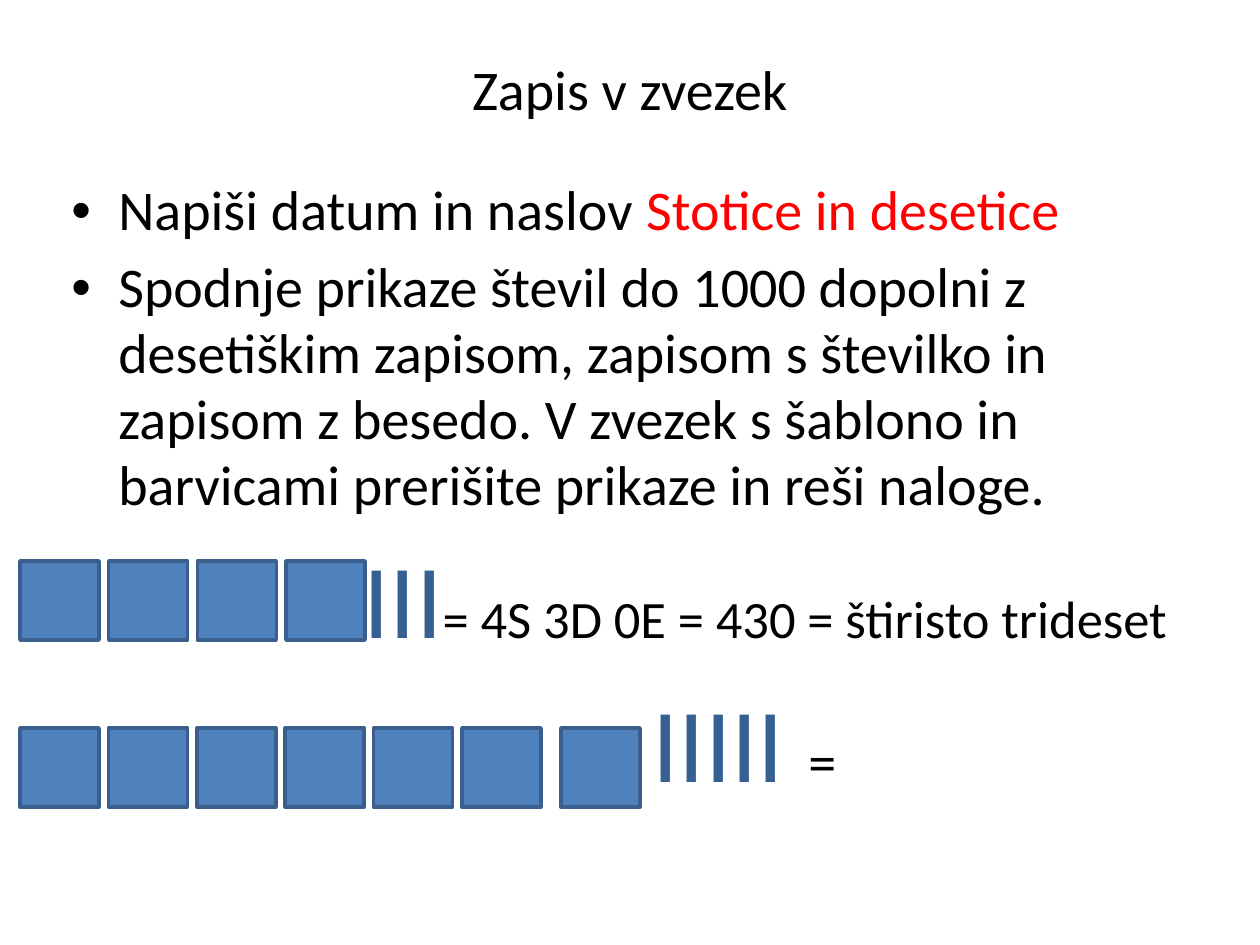
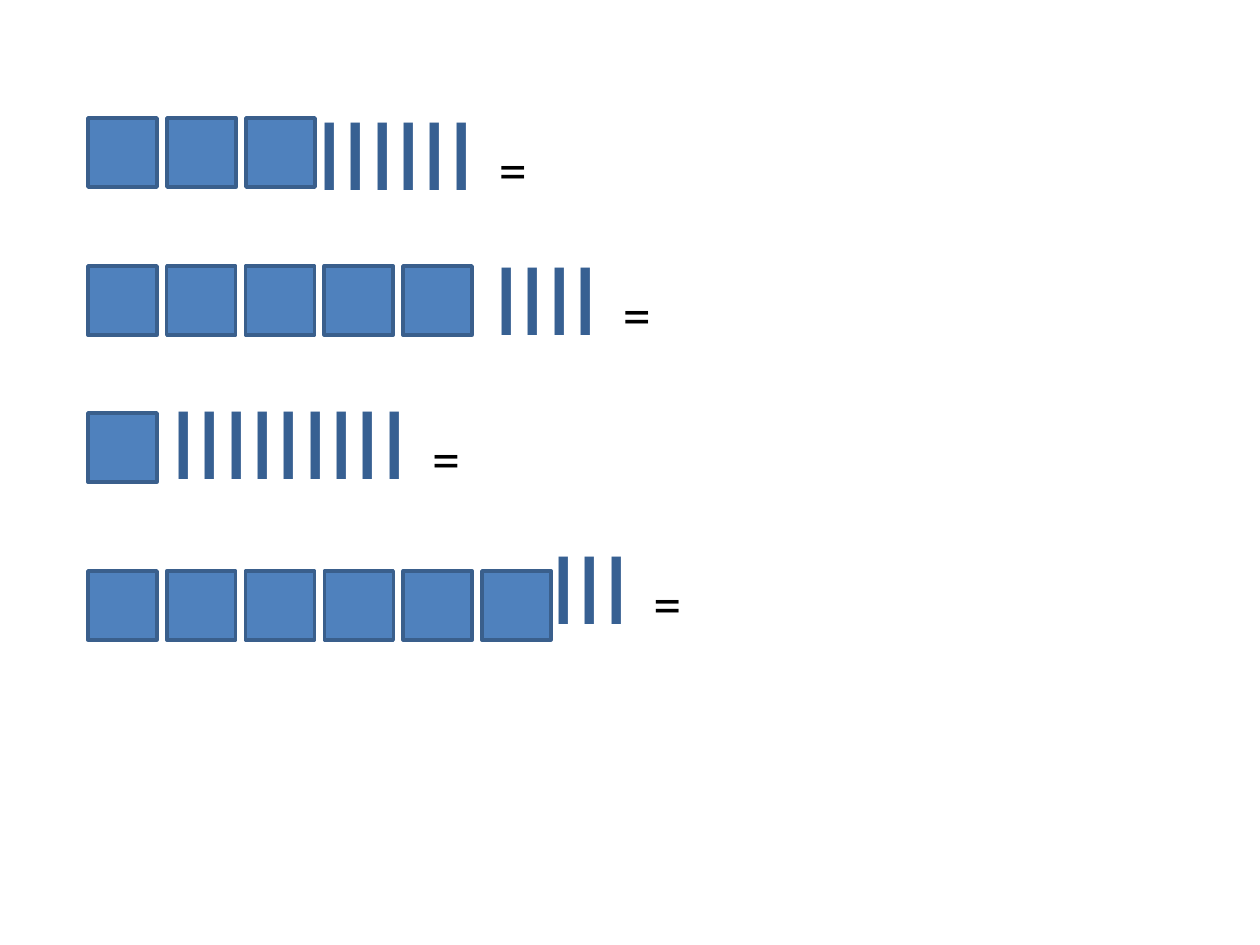
import pptx
import pptx.util
import pptx.dml.color
import pptx.enum.shapes
import pptx.enum.text
import pptx.oxml
from dataclasses import dataclass
from lxml import etree

PX = pptx.util.Inches(1) // 126


@dataclass(frozen=True)
class Theme:
    font: str = "Calibri"
    ink: str = "000000"
    accent: str = "FF0000"
    tens: str = "376092"
    square: str = "4F81BD"
    outline: str = "3A5F8C"
    text_size: int = 32
    answer_size: int = 30
    tens_size: int = 60
    outline_width: int = 2
    line_spacing: float = 0.98
    space_before: float = 0.2  # share of the type size


THEME = Theme()

# Runs are (text, size, colour)
PLAIN = (THEME.text_size, THEME.ink)
TENS = (THEME.tens_size, THEME.tens)
EQUALS = ("=", *PLAIN)


def tens_row(indent, count):
    return {"indent": indent, "runs": [("I" * count + " ", *TENS), EQUALS]}


# Content: squares are (first left, last left, top, count)
SLIDES = [
    {
        "title": "Zapis v zvezek",
        "body_box": (59, 168, 1134, 687),
        "inset_top": 10,
        "paragraphs": [
            {"bullet": True, "runs": [
                ("Napiši datum in naslov ", *PLAIN),
                ("Stotice in desetice", THEME.text_size, THEME.accent)]},
            {"bullet": True, "runs": [
                ("Spodnje prikaze števil do 1000 dopolni z desetiškim zapisom, "
                 "zapisom s številko in zapisom z besedo. V zvezek s šablono in "
                 "barvicami prerišite prikaze in reši naloge.", *PLAIN)]},
            {"indent": 292, "runs": [
                ("III", *TENS),
                ("= 4S 3D 0E = 430 = štiristo trideset", THEME.answer_size, THEME.ink)]},
            tens_row(581, 5),
        ],
        "side": 79,
        "squares": [(20, 286, 561, 4), (20, 462, 728, 6), (561, 561, 728, 1)],
    },
    {
        "body_box": (63, 78, 1134, 765),
        "inset_top": 14,
        "paragraphs": [tens_row(241, 6), tens_row(418, 4), tens_row(95, 9), tens_row(475, 3)],
        "side": 69,
        "squares": [(88, 246, 118, 3), (88, 403, 266, 5), (88, 88, 413, 1), (88, 482, 571, 6)],
    },
]
TITLE_BOX = (63, 38, 1134, 100)
BULLET_INDENT = 47


def emu(*lengths):
    return [round(length * PX) for length in lengths]


def rgb(colour):
    return pptx.dml.color.RGBColor.from_string(colour)


def format_run(run, size, colour):
    run.font.name = THEME.font
    run.font.size = pptx.util.Pt(size)
    run.font.color.rgb = rgb(colour)


def set_indent(paragraph, left, bullet):
    properties = paragraph._p.get_or_add_pPr()
    properties.set("marL", str(left * PX))
    properties.set("indent", str(-left * PX if bullet else 0))
    if bullet:
        font = etree.SubElement(properties, pptx.oxml.ns.qn("a:buFont"))
        font.set("typeface", "Arial")
        mark = etree.SubElement(properties, pptx.oxml.ns.qn("a:buChar"))
        mark.set("char", "•")


def add_title(slide, text):
    title = slide.shapes.title
    title.left, title.top, title.width, title.height = emu(*TITLE_BOX)
    title.text_frame.text = text
    title.text_frame.vertical_anchor = pptx.enum.text.MSO_ANCHOR.MIDDLE
    paragraph = title.text_frame.paragraphs[0]
    paragraph.alignment = pptx.enum.text.PP_ALIGN.CENTER
    format_run(paragraph.runs[0], *PLAIN)


def add_body(slide, box, inset_top, paragraphs):
    text_frame = slide.shapes.add_textbox(*emu(*box)).text_frame
    text_frame.word_wrap = True
    text_frame.margin_top = inset_top * PX
    for index, content in enumerate(paragraphs):
        paragraph = text_frame.add_paragraph() if index else text_frame.paragraphs[0]
        paragraph.line_spacing = THEME.line_spacing
        # The top inset sets the place of the first paragraph
        largest = max(size for _, size, _ in content["runs"])
        paragraph.space_before = pptx.util.Pt(THEME.space_before * largest if index else 0)
        set_indent(paragraph, content.get("indent", BULLET_INDENT), content.get("bullet", False))
        for text, size, colour in content["runs"]:
            run = paragraph.add_run()
            run.text = text
            format_run(run, size, colour)


def add_squares(slide, side, first, last, top, count):
    step = (last - first) / max(count - 1, 1)
    for index in range(count):
        square = slide.shapes.add_shape(
            pptx.enum.shapes.MSO_SHAPE.RECTANGLE, *emu(first + index * step, top, side, side))
        square.shadow.inherit = False
        square.fill.solid()
        square.fill.fore_color.rgb = rgb(THEME.square)
        square.line.color.rgb = rgb(THEME.outline)
        square.line.width = pptx.util.Pt(THEME.outline_width)


def main():
    presentation = pptx.Presentation()
    presentation.slide_width, presentation.slide_height = emu(1260, 945)
    title_only, blank = presentation.slide_layouts[5], presentation.slide_layouts[6]
    for content in SLIDES:
        slide = presentation.slides.add_slide(title_only if "title" in content else blank)
        if "title" in content:
            add_title(slide, content["title"])
        add_body(slide, content["body_box"], content["inset_top"], content["paragraphs"])
        for row in content["squares"]:
            add_squares(slide, content["side"], *row)
    presentation.save("out.pptx")


if __name__ == "__main__":
    main()
